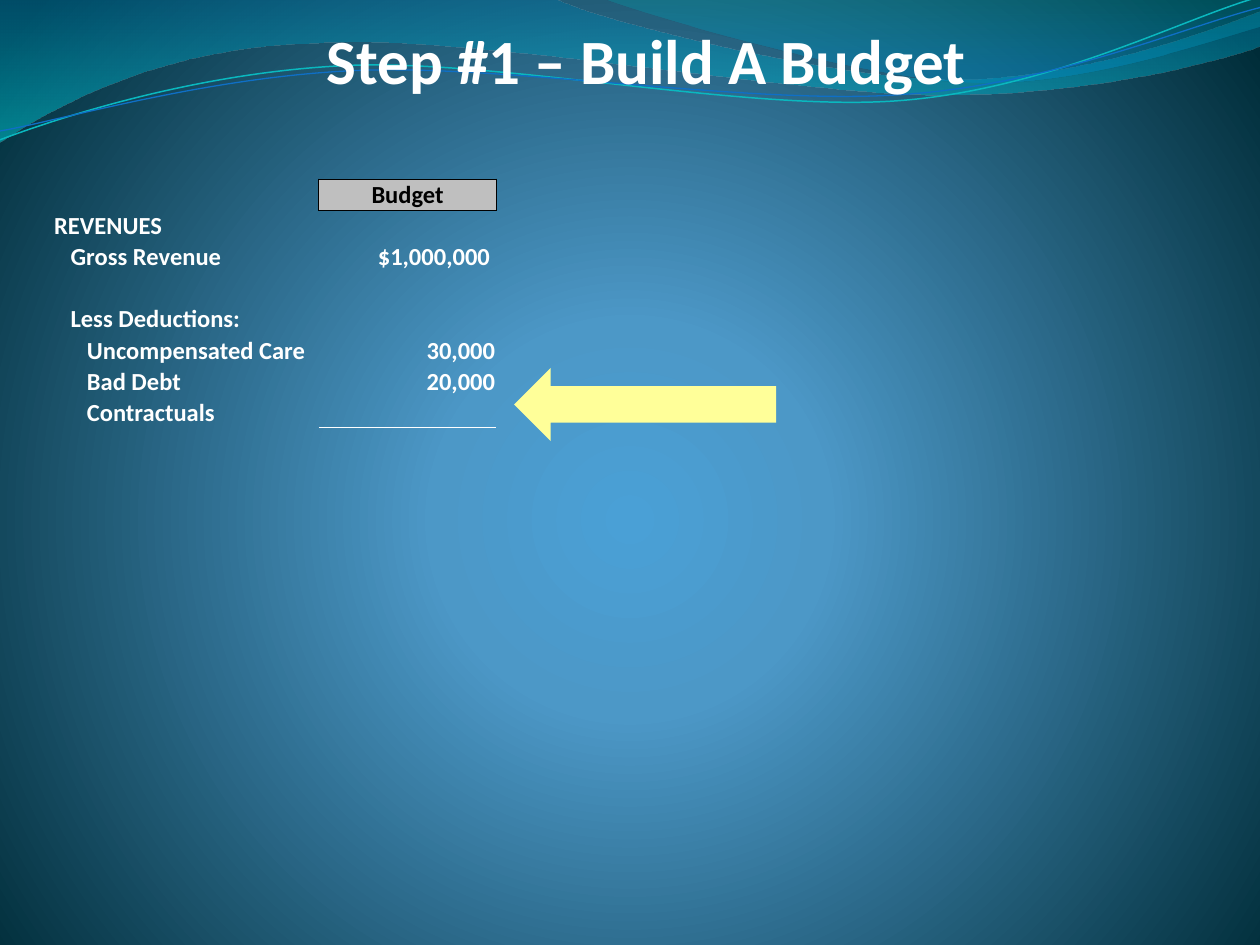
import pptx
import pptx.util
import pptx.dml.color
import pptx.enum.shapes
import pptx.enum.text
import pptx.oxml.ns
from lxml import etree

Inches, Pt = pptx.util.Inches, pptx.util.Pt
RGB = pptx.dml.color.RGBColor.from_string
Align = pptx.enum.text.PP_ALIGN
Anchor = pptx.enum.text.MSO_ANCHOR
qn = pptx.oxml.ns.qn

THEME = {
    "font": "Calibri", "title": 36, "body": 14,
    "light": "FFFFFF", "dark": "000000", "head": "BFBFBF", "arrow": "FFFF99",
    "back": [(0, "4AA0D6", 100), (25, "4C98C7", 100), (100, "002C38", 100)],
}
NO_STYLE = "{2D5ABB26-0587-4C30-8999-92F81FD0307C}"

TITLE = "Step #1 – Build A Budget"

# label, indent level, value, right gap
ROWS = [
    ("", 0, "Budget", 0),
    ("REVENUES", 0, "", 0),
    ("Gross Revenue", 1, "$1,000,000", 0.04),
    ("", 0, "", 0),
    ("Less Deductions:", 1, "", 0),
    ("Uncompensated Care", 2, "30,000", 0),
    ("Bad Debt", 2, "20,000", 0),
    ("Contractuals", 2, "", 0),
]
COLS = (2.11, 1.41)
ROW_H, PAD, INDENT = 0.24, 0.01, 0.13
GRID = 1000  # outline units to the inch

# A pair is a corner; six numbers are a Bezier curve.
BANDS = [
    ([(0, 0), (4.4, -0.01), (4.76, 0.17, 6.64, 0.63, 7.58, 0.63),
      (8.53, 0.63, 9.58, 0.26, 10, 0.09), (10.01, 0.36),
      (9.83, 0.44, 8.7, 0.76, 7.46, 0.75),
      (6.22, 0.75, 3.82, 0.28, 2.57, 0.34),
      (1.29, 0.36, 0.46, 0.83, -0.01, 1.13)],
     [(0, "0074A1", 45), (100, "00C6CF", 55)]),
    ([(4.79, -0.01), (5.09, 0.11, 6.82, 0.62, 7.69, 0.65),
      (8.56, 0.69, 9.61, 0.32, 10, 0.21), (10, 0)],
     [(0, "00A1A9", 30), (80, "008BBF", 45)]),
]
WAVES = [
    ([(0, 1.11), (0.48, 0.93, 1.58, 0.57, 2.77, 0.52),
      (3.95, 0.47, 5.93, 0.89, 7.13, 0.8),
      (8.33, 0.71, 9.38, 0.15, 9.98, -0.02)], "0AB8BF", 0.85),
    ([(0, 1.04), (0.47, 0.96, 1.64, 0.61, 2.83, 0.56),
      (4.03, 0.51, 5.97, 0.84, 7.17, 0.75),
      (8.36, 0.67, 9.41, 0.21, 10, 0.06)], "0F6FC6", 0.75),
]


def write(frame, text, size=THEME["body"], color=THEME["light"], align=Align.LEFT):
    para = frame.paragraphs[0]
    para.alignment = align
    if not text:
        # an empty cell keeps the type size, so its row does not grow
        etree.SubElement(para._p, qn("a:endParaRPr"), sz=str(size * 100))
        return
    run = para.add_run()
    run.text = text
    font = run.font
    font.name, font.size, font.bold = THEME["font"], Pt(size), True
    font.color.rgb = RGB(color)


def shade(props, stops, focus=None):
    """Swap the solid fill in props for a gradient, downward or circular."""
    grad = etree.Element(qn("a:gradFill"), rotWithShape="1")
    group = etree.SubElement(grad, qn("a:gsLst"))
    for pos, color, alpha in stops:
        stop = etree.SubElement(group, qn("a:gs"), pos=str(pos * 1000))
        tint = etree.SubElement(stop, qn("a:srgbClr"), val=color)
        if alpha < 100:
            etree.SubElement(tint, qn("a:alpha"), val=str(alpha * 1000))
    if focus:
        path = etree.SubElement(grad, qn("a:path"), path="circle")
        sides = {side: str(v * 1000) for side, v in zip("ltrb", focus)}
        etree.SubElement(path, qn("a:fillToRect"), **sides)
    else:
        etree.SubElement(grad, qn("a:lin"), ang="5400000", scaled="0")
    props.replace(props.find(qn("a:solidFill")), grad)


def outline(slide, steps, close):
    """Draw the anchors as a freeform, then bend its curved segments."""
    ends = [(round(s[-2] * GRID), round(s[-1] * GRID)) for s in steps]
    pen = slide.shapes.build_freeform(*ends[0], scale=Inches(1) / GRID)
    pen.add_line_segments(ends[1:], close=close)
    shape = pen.convert_to_shape()
    shape.shadow.inherit = False
    left, top = (min(axis) for axis in zip(*ends))
    lines = list(shape._element.iter(qn("a:lnTo")))
    for line, step in zip(lines, steps[1:]):
        if len(step) == 2:
            continue
        curve = etree.Element(qn("a:cubicBezTo"))
        for x, y in zip(step[::2], step[1::2]):
            etree.SubElement(curve, qn("a:pt"), x=str(round(x * GRID) - left),
                             y=str(round(y * GRID) - top))
        line.getparent().replace(line, curve)
    return shape


def edge(cell, sides, color, width):
    props = cell._tc.get_or_add_tcPr()
    for i, side in enumerate(sides):
        line = etree.Element(qn("a:ln" + side), w=str(Pt(width)))
        fill = etree.SubElement(line, qn("a:solidFill"))
        etree.SubElement(fill, qn("a:srgbClr"), val=color)
        props.insert(i, line)


def draw_back(slide):
    slide.background.fill.solid()
    shade(slide._element.find(".//" + qn("p:bgPr")), THEME["back"], (10, 110, 10, 100))
    for steps, stops in BANDS:
        band = outline(slide, steps, True)
        band.line.fill.background()
        band.fill.solid()
        shade(band._element.spPr, stops)
    for steps, color, width in WAVES:
        wave = outline(slide, steps, False)
        wave.fill.background()
        wave.line.color.rgb = RGB(color)
        wave.line.width = Pt(width)


def draw_title(slide):
    title = slide.shapes.title
    slide.shapes._spTree.append(title._element)  # in front of the waves
    title.left, title.top = Inches(-1.14), Inches(-0.25)
    title.width, title.height = Inches(12.56), Inches(1.02)
    frame = title.text_frame
    frame.auto_size = pptx.enum.text.MSO_AUTO_SIZE.NONE
    frame.vertical_anchor = Anchor.BOTTOM
    frame.margin_left = frame.margin_top = frame.margin_bottom = 0
    frame.margin_right = Inches(0.02)
    write(frame, TITLE, size=THEME["title"], align=Align.CENTER)


def draw_arrow(slide):
    arrow = slide.shapes.add_shape(
        pptx.enum.shapes.MSO_SHAPE.LEFT_ARROW,
        Inches(4.08), Inches(2.92), Inches(2.08), Inches(0.58))
    arrow.shadow.inherit = False
    arrow.fill.solid()
    arrow.fill.fore_color.rgb = RGB(THEME["arrow"])
    arrow.line.fill.background()


def draw_table(slide):
    table = slide.shapes.add_table(
        len(ROWS), len(COLS), Inches(0.42), Inches(1.42),
        Inches(sum(COLS)), Inches(ROW_H * len(ROWS))).table
    table.first_row = table.horz_banding = False
    table._tbl.tblPr.find(qn("a:tableStyleId")).text = NO_STYLE
    for col, width in zip(table.columns, COLS):
        col.width = Inches(width)
    for r, (label, level, value, gap) in enumerate(ROWS):
        table.rows[r].height = Inches(ROW_H)
        for c, text in enumerate((label, value)):
            cell = table.cell(r, c)
            cell.fill.background()
            cell.vertical_anchor = Anchor.BOTTOM
            cell.margin_left = Inches(PAD + (0 if c else INDENT * level))
            cell.margin_right = Inches(PAD + (gap if c else 0))
            cell.margin_top, cell.margin_bottom = Inches(PAD), 0
            head = r == 0 and c == 1
            if head:
                cell.fill.solid()
                cell.fill.fore_color.rgb = RGB(THEME["head"])
            write(cell.text_frame, text, color=THEME["dark" if head else "light"],
                  align=Align.CENTER if head else Align.RIGHT if c else Align.LEFT)
    edge(table.cell(0, 1), "LRTB", THEME["dark"], 0.5)
    edge(table.cell(len(ROWS) - 1, 1), "B", THEME["light"], 1)


def main():
    deck = pptx.Presentation()
    deck.slide_width, deck.slide_height = Inches(10), Inches(7.5)
    slide = deck.slides.add_slide(deck.slide_layouts[0])
    sub = slide.placeholders[1]._element
    sub.getparent().remove(sub)
    draw_back(slide)
    draw_title(slide)
    draw_arrow(slide)
    draw_table(slide)
    deck.save("out.pptx")


if __name__ == "__main__":
    main()
